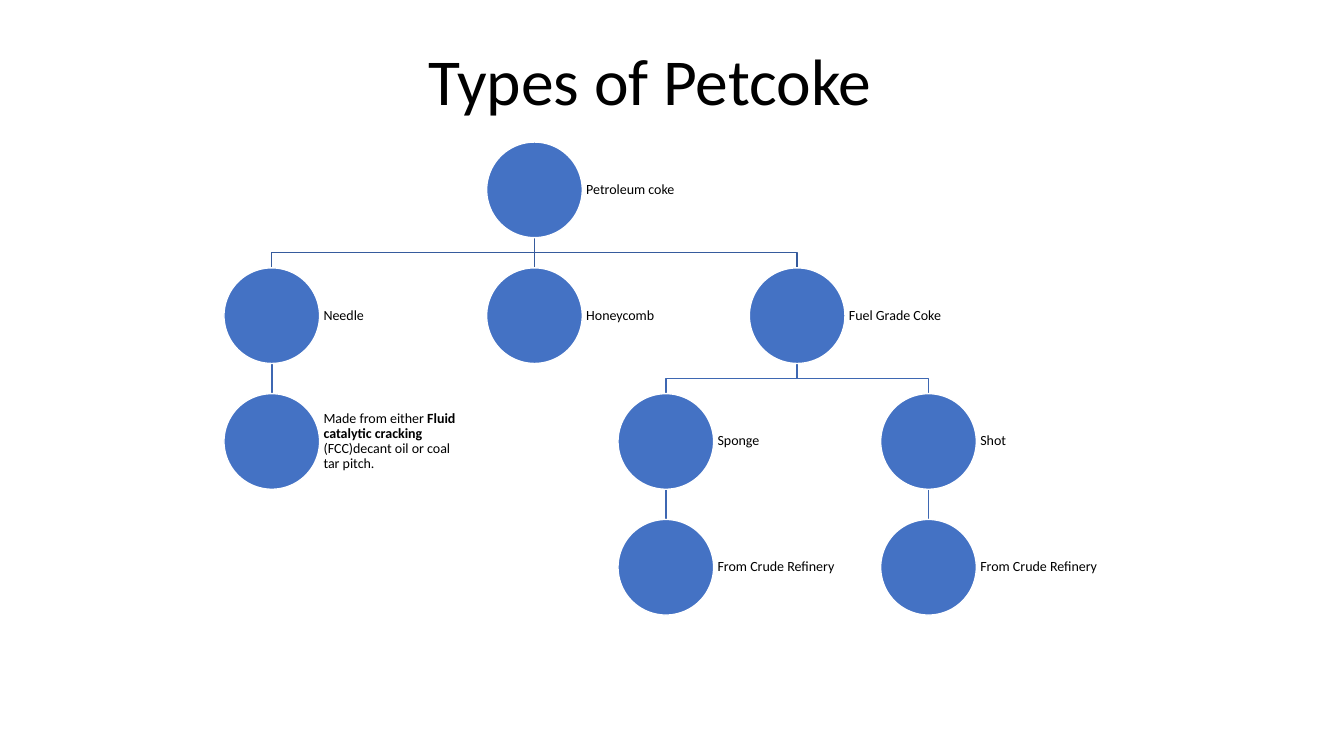
import dataclasses

import pptx
import pptx.dml.color
import pptx.enum.shapes
import pptx.enum.text
import pptx.oxml.ns
import pptx.util
from lxml import etree

Cm = pptx.util.Cm
Pt = pptx.util.Pt
Color = pptx.dml.color.RGBColor.from_string
Anchor = pptx.enum.text.MSO_ANCHOR


@dataclasses.dataclass
class Theme:
    font: str = "Calibri"
    text: Color = Color("000000")
    circle: Color = Color("4472C4")
    outline: Color = Color("FFFFFF")
    upper_link: Color = Color("365B9D")
    lower_link: Color = Color("3E67B2")
    title_size: float = 46.8
    label_size: float = 10
    line_width: float = 1


theme = Theme()
deck = pptx.Presentation()
deck.slide_width, deck.slide_height = Cm(33.87), Cm(19.05)
page = deck.slides.add_slide(deck.slide_layouts[6])


def add_text(spans, left, top, width, height, *, size, spacing, inset, anchor, indent=0):
    """Place one paragraph made of (text, bold) spans."""
    box = page.shapes.add_textbox(left, top, width, height)
    frame = box.text_frame
    frame.word_wrap = True
    frame.vertical_anchor = anchor
    frame.margin_left = inset + indent
    frame.margin_right = frame.margin_top = frame.margin_bottom = inset
    para = frame.paragraphs[0]
    para.line_spacing = spacing
    for text, bold in spans:
        span = para.add_run()
        span.text = text
        span.font.name = theme.font
        span.font.size = Pt(size)
        span.font.bold = bold
        span.font.color.rgb = theme.text


# Tree: name -> (column, row, label spans, parent); columns are half a branch apart
tree = {
    "coke": (2, 0, [("Petroleum coke", False)], None),
    "needle": (0, 1, [("Needle", False)], "coke"),
    "needle source": (0, 2, [("Made from either ", False),
                             ("Fluid catalytic cracking", True),
                             (" (FCC)decant oil or coal tar pitch.", False)], "needle"),
    "honeycomb": (2, 1, [("Honeycomb", False)], "coke"),
    "fuel": (4, 1, [("Fuel Grade Coke", False)], "coke"),
    "sponge": (3, 2, [("Sponge", False)], "fuel"),
    "sponge source": (3, 3, [("From Crude Refinery", False)], "sponge"),
    "shot": (5, 2, [("Shot", False)], "fuel"),
    "shot source": (5, 3, [("From Crude Refinery", False)], "shot"),
}
diameter = Cm(2.41)
label_width = Cm(3.61)
center_x = [Cm(6.85 + 3.31 * column) for column in range(6)]
row_top = [Cm(3.58 + 3.17 * row) for row in range(4)]

# Links: straight below the parent, otherwise an elbow halfway between rows
for column, row, spans, parent in tree.values():
    if parent is None:
        continue
    parent_column, parent_row = tree[parent][:2]
    start_x, end_x = center_x[parent_column], center_x[column]
    start_y, end_y = row_top[parent_row] + diameter, row_top[row]
    if start_x == end_x:
        link = page.shapes.add_connector(
            pptx.enum.shapes.MSO_CONNECTOR.STRAIGHT, start_x, start_y, end_x, end_y)
    else:
        middle = (start_y + end_y) // 2
        builder = page.shapes.build_freeform(start_x, start_y)
        builder.add_line_segments(
            [(start_x, middle), (end_x, middle), (end_x, end_y)], close=False)
        link = builder.convert_to_shape()
        link.fill.background()
    link.line.color.rgb = theme.upper_link if parent_row == 0 else theme.lower_link
    link.line.width = Pt(theme.line_width)
    etree.SubElement(link._element.spPr, pptx.oxml.ns.qn("a:effectLst"))

# Circles with their labels to the right
for column, row, spans, parent in tree.values():
    left, top = center_x[column] - diameter // 2, row_top[row]
    circle = page.shapes.add_shape(
        pptx.enum.shapes.MSO_SHAPE.OVAL, left, top, diameter, diameter)
    circle.shadow.inherit = False
    circle.fill.solid()
    circle.fill.fore_color.rgb = theme.circle
    circle.line.color.rgb = theme.outline
    circle.line.width = Pt(theme.line_width)
    add_text(spans, left + diameter, top, label_width, diameter, size=theme.label_size,
             spacing=0.9, inset=Cm(0.1), anchor=Anchor.MIDDLE)

# Title
add_text([("Types of Petcoke", False)], Cm(2.26), Cm(1.14), Cm(30.56), Cm(1.96),
         size=theme.title_size, spacing=0.8, inset=Cm(0.13), anchor=Anchor.BOTTOM,
         indent=Cm(8.4))

deck.save("out.pptx")
